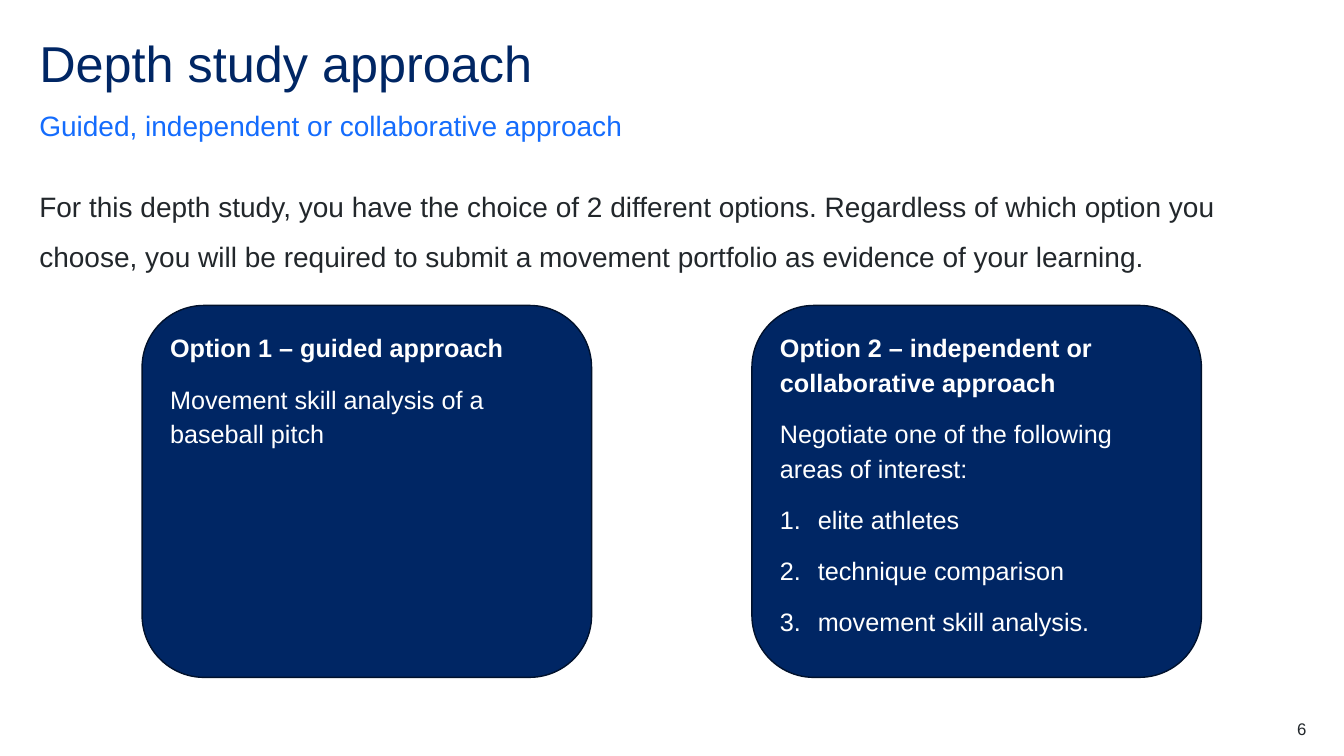
from lxml import etree
from pptx import Presentation
from pptx.dml.color import RGBColor
from pptx.enum.shapes import MSO_SHAPE
from pptx.enum.text import MSO_ANCHOR, PP_ALIGN
from pptx.oxml.ns import qn
from pptx.util import Pt

TOP, BOTTOM = MSO_ANCHOR.TOP, MSO_ANCHOR.BOTTOM
LEFT, RIGHT = PP_ALIGN.LEFT, PP_ALIGN.RIGHT
ROUNDED = MSO_SHAPE.ROUNDED_RECTANGLE

NAVY = RGBColor(0x00, 0x26, 0x64)
BLUE = RGBColor(0x14, 0x6C, 0xFD)
INK = RGBColor(0x22, 0x27, 0x2B)
EDGE = RGBColor(0x00, 0x11, 0x2C)
WHITE = RGBColor(0xFF, 0xFF, 0xFF)
FONT = "Arial"

# Text, box (left, top, width, height), size, colour, anchor, paragraph format
TEXTS = [
    ("Depth study approach", (28.08, 28.08, 904.32, 43.2), 36, NAVY, TOP,
     {"line_spacing": 0.9}),
    ("Guided, independent or collaborative approach",
     (28.08, 77.04, 904.32, 24.48), 20, BLUE, BOTTOM,
     {"line_spacing": 1.5, "space_after": Pt(12)}),
    ("For this depth study, you have the choice of 2 different options. "
     "Regardless of which option you choose, you will be required to submit "
     "a movement portfolio as evidence of your learning.",
     (28.08, 123.12, 904.32, 79.92), 20, INK, TOP,
     {"line_spacing": 1.5, "space_after": Pt(12)}),
    ("6", (876.24, 513.36, 56.88, 14.4), 12, INK, TOP, {"alignment": RIGHT}),
]

# Heading, introduction, numbered items
OPTIONS = [
    ("Option 1 – guided approach",
     "Movement skill analysis of a baseball pitch", []),
    ("Option 2 – independent or collaborative approach",
     "Negotiate one of the following areas of interest:",
     ["elite athletes", "technique comparison", "movement skill analysis."]),
]
CARD_LEFT, CARD_TOP, CARD_STEP = 101.52, 218.16, 435.6
CARD_W, CARD_H = 321.12, 265.68
CARD_FORMAT = {"alignment": LEFT, "line_spacing": 1.14, "space_after": Pt(12)}
NUMBER_INDENT = Pt(27)


def write(p, text, size, color, fmt, bold=False):
    for name, value in fmt.items():
        setattr(p, name, value)
    r = p.add_run()
    r.text = text
    font = {"name": FONT, "size": Pt(size), "bold": bold}
    for name, value in font.items():
        setattr(r.font, name, value)
    r.font.color.rgb = color


def number(p):
    """Give the paragraph an automatic number and a hanging indent."""
    pPr = p._p.get_or_add_pPr()
    pPr.set("marL", str(NUMBER_INDENT))
    pPr.set("indent", str(-NUMBER_INDENT))
    etree.SubElement(pPr, qn("a:buFont"), typeface="+mj-lt")
    etree.SubElement(pPr, qn("a:buAutoNum"), type="arabicPeriod")


def add_text(slide, text, box, size, color, anchor, fmt):
    tf = slide.shapes.add_textbox(*map(Pt, box)).text_frame
    tf.word_wrap = True
    tf.vertical_anchor = anchor
    for side in ("left", "top", "right", "bottom"):
        setattr(tf, f"margin_{side}", 0)
    write(tf.paragraphs[0], text, size, color, fmt)


def add_card(slide, left, heading, intro, items):
    box = (left, CARD_TOP, CARD_W, CARD_H)
    sp = slide.shapes.add_shape(ROUNDED, *map(Pt, box))
    sp.shadow.inherit = False
    sp.fill.solid()
    sp.fill.fore_color.rgb = NAVY
    sp.line.color.rgb = EDGE
    sp.line.width = Pt(1)
    tf = sp.text_frame
    tf.word_wrap = True
    tf.vertical_anchor = TOP
    write(tf.paragraphs[0], heading, 18, WHITE, CARD_FORMAT, bold=True)
    write(tf.add_paragraph(), intro, 18, WHITE, CARD_FORMAT)
    for item in items:
        p = tf.add_paragraph()
        write(p, item, 18, WHITE, CARD_FORMAT)
        number(p)


def main():
    prs = Presentation()
    prs.slide_width, prs.slide_height = Pt(960), Pt(540)
    slide = prs.slides.add_slide(prs.slide_layouts[6])
    for text in TEXTS:
        add_text(slide, *text)
    for i, option in enumerate(OPTIONS):
        add_card(slide, CARD_LEFT + i * CARD_STEP, *option)
    prs.save("out.pptx")


if __name__ == "__main__":
    main()
